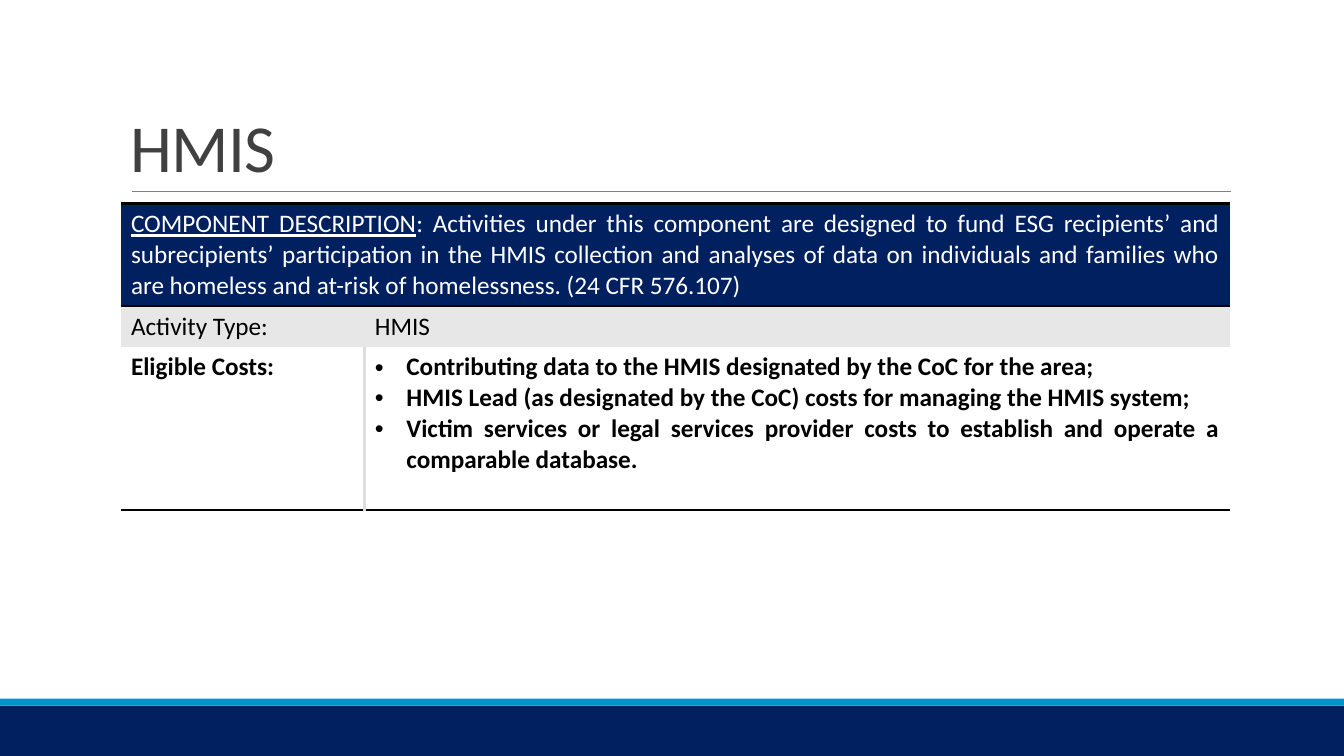
from dataclasses import dataclass, field

import lxml.etree
import pptx
import pptx.dml.color
import pptx.enum.shapes
import pptx.enum.text
import pptx.oxml.ns
import pptx.shapes.connector
import pptx.slide
import pptx.table
import pptx.text.text
import pptx.util

Pt = pptx.util.Pt
Align = pptx.enum.text.PP_ALIGN


@dataclass(frozen=True)
class Theme:
    font: str = "Calibri"
    title_size: float = 48
    body_size: float = 18
    navy: str = "002060"
    blue: str = "0094C8"
    rule: str = "808080"
    title: str = "404040"
    white: str = "FFFFFF"
    black: str = "000000"
    band: str = "E7E7E7"
    divider: str = "DDDDDD"


THEME = Theme()


@dataclass(frozen=True)
class Border:
    color: str
    width: float


@dataclass(frozen=True)
class FooterBand:
    top: float
    height: float
    color: str


@dataclass(frozen=True)
class CellSpec:
    row: int
    column: int
    paragraphs: list[list[str]]
    fill: str
    color: str = THEME.black
    bold: bool = False
    justified: bool = False
    bulleted: bool = False
    underline_first: bool = False
    borders: dict[str, Border] = field(default_factory=dict)


SLIDE_WIDTH, SLIDE_HEIGHT = 960, 540
TABLE_LEFT, TABLE_TOP = 86.4, 145.4
COLUMN_WIDTHS = (174.2, 617.8)
ROW_HEIGHTS = (73.2, 29.25, 116.6)
BULLET_INDENT = 22.5

HEAVY = Border(THEME.black, 2)
DIVIDER = Border(THEME.divider, 2.25)

FOOTER = [
    FooterBand(504, 36, THEME.navy),
    FooterBand(499, 5, THEME.blue),
]

CELLS = [
    CellSpec(0, 0, [[
        "COMPONENT DESCRIPTION",
        ": Activities under this component are designed to fund ESG recipients’ and "
        "subrecipients’ participation in the HMIS collection and analyses of data on "
        "individuals and families who are homeless and at-risk of homelessness. "
        "(24 CFR 576.107)",
    ]], THEME.navy, color=THEME.white, justified=True, underline_first=True,
        borders={"T": HEAVY, "B": HEAVY}),
    CellSpec(0, 1, [], THEME.navy, borders={"T": HEAVY, "B": HEAVY}),
    CellSpec(1, 0, [["Activity Type:"]], THEME.band, borders={"T": HEAVY}),
    CellSpec(1, 1, [["HMIS"]], THEME.band, borders={"T": HEAVY}),
    CellSpec(2, 0, [["Eligible Costs:"]], THEME.white, bold=True,
             borders={"R": DIVIDER, "B": HEAVY}),
    CellSpec(2, 1, [
        ["Contributing data to the HMIS designated by the CoC for the area;"],
        ["HMIS Lead (as designated by the CoC) costs for managing the HMIS system;"],
        ["Victim services or legal services provider costs to establish and operate a "
         "comparable database."],
    ], THEME.white, bold=True, justified=True, bulleted=True,
        borders={"L": DIVIDER, "B": HEAVY}),
]


def rgb(color: str) -> pptx.dml.color.RGBColor:
    return pptx.dml.color.RGBColor.from_string(color)


def add_child(parent: lxml.etree._Element, tag: str, **attributes: str) -> lxml.etree._Element:
    return lxml.etree.SubElement(parent, pptx.oxml.ns.qn(tag), attributes)


def style_run(run: pptx.text.text._Run, size: float, color: str, bold: bool = False) -> None:
    run.font.name = THEME.font
    run.font.size = Pt(size)
    run.font.bold = bold
    run.font.color.rgb = rgb(color)


def add_footer_band(slide: pptx.slide.Slide, band: FooterBand) -> None:
    bar = slide.shapes.add_shape(
        pptx.enum.shapes.MSO_SHAPE.RECTANGLE,
        Pt(0), Pt(band.top), Pt(SLIDE_WIDTH), Pt(band.height))
    bar.shadow.inherit = False
    bar.fill.solid()
    bar.fill.fore_color.rgb = rgb(band.color)
    bar.line.fill.background()


def add_title_rule(slide: pptx.slide.Slide) -> None:
    rule = slide.shapes.add_connector(
        pptx.enum.shapes.MSO_CONNECTOR.STRAIGHT, Pt(94.3), Pt(136.8), Pt(879), Pt(136.8))
    rule.line.color.rgb = rgb(THEME.rule)
    rule.line.width = Pt(0.5)
    add_child(rule._element.spPr, "a:effectLst")


def add_title(slide: pptx.slide.Slide, text: str) -> None:
    title = slide.shapes.add_textbox(Pt(86.4), Pt(22.6), Pt(792), Pt(114.2))
    frame = title.text_frame
    frame.word_wrap = True
    frame.vertical_anchor = pptx.enum.text.MSO_ANCHOR.BOTTOM
    frame.text = text
    heading = frame.paragraphs[0]
    heading.line_spacing = 0.85
    style_run(heading.runs[0], THEME.title_size, THEME.title)
    heading.runs[0].font._element.set("spc", "-50")


def set_borders(cell: pptx.table._Cell, borders: dict[str, Border]) -> None:
    """Draw the given sides and clear the others; call before filling the cell."""
    properties = cell._tc.get_or_add_tcPr()
    for side in "LRTB":
        border = borders.get(side)
        if border is None:
            add_child(add_child(properties, f"a:ln{side}", w="0"), "a:noFill")
            continue
        line = add_child(properties, f"a:ln{side}", w=str(Pt(border.width)))
        add_child(add_child(line, "a:solidFill"), "a:srgbClr", val=border.color)


def add_bullet(paragraph: pptx.text.text._Paragraph) -> None:
    properties = paragraph._p.get_or_add_pPr()
    properties.set("marL", str(Pt(BULLET_INDENT)))
    properties.set("indent", str(-Pt(BULLET_INDENT)))
    add_child(properties, "a:buFont", typeface="Arial")
    add_child(properties, "a:buChar", char="•")


def fill_cell(cell: pptx.table._Cell, spec: CellSpec) -> None:
    set_borders(cell, spec.borders)
    cell.fill.solid()
    cell.fill.fore_color.rgb = rgb(spec.fill)
    frame = cell.text_frame
    for index, texts in enumerate(spec.paragraphs):
        paragraph = frame.paragraphs[0] if index == 0 else frame.add_paragraph()
        paragraph.alignment = Align.JUSTIFY if spec.justified else Align.LEFT
        if spec.bulleted:
            add_bullet(paragraph)
        for text in texts:
            run = paragraph.add_run()
            run.text = text
            style_run(run, THEME.body_size, spec.color, spec.bold)
        if spec.underline_first:
            paragraph.runs[0].font.underline = True


def add_component_table(slide: pptx.slide.Slide) -> None:
    component = slide.shapes.add_table(
        len(ROW_HEIGHTS), len(COLUMN_WIDTHS), Pt(TABLE_LEFT), Pt(TABLE_TOP),
        Pt(sum(COLUMN_WIDTHS)), Pt(sum(ROW_HEIGHTS))).table
    component.first_row = False
    component.horz_banding = False
    for column, width in zip(component.columns, COLUMN_WIDTHS):
        column.width = Pt(width)
    for row, height in zip(component.rows, ROW_HEIGHTS):
        row.height = Pt(height)
    component.cell(0, 0).merge(component.cell(0, 1))
    for spec in CELLS:
        fill_cell(component.cell(spec.row, spec.column), spec)


def main() -> None:
    deck = pptx.Presentation()
    deck.slide_width, deck.slide_height = Pt(SLIDE_WIDTH), Pt(SLIDE_HEIGHT)
    slide = deck.slides.add_slide(deck.slide_layouts[6])
    for band in FOOTER:
        add_footer_band(slide, band)
    add_title_rule(slide)
    add_title(slide, "HMIS")
    add_component_table(slide)
    deck.save("out.pptx")


if __name__ == "__main__":
    main()
